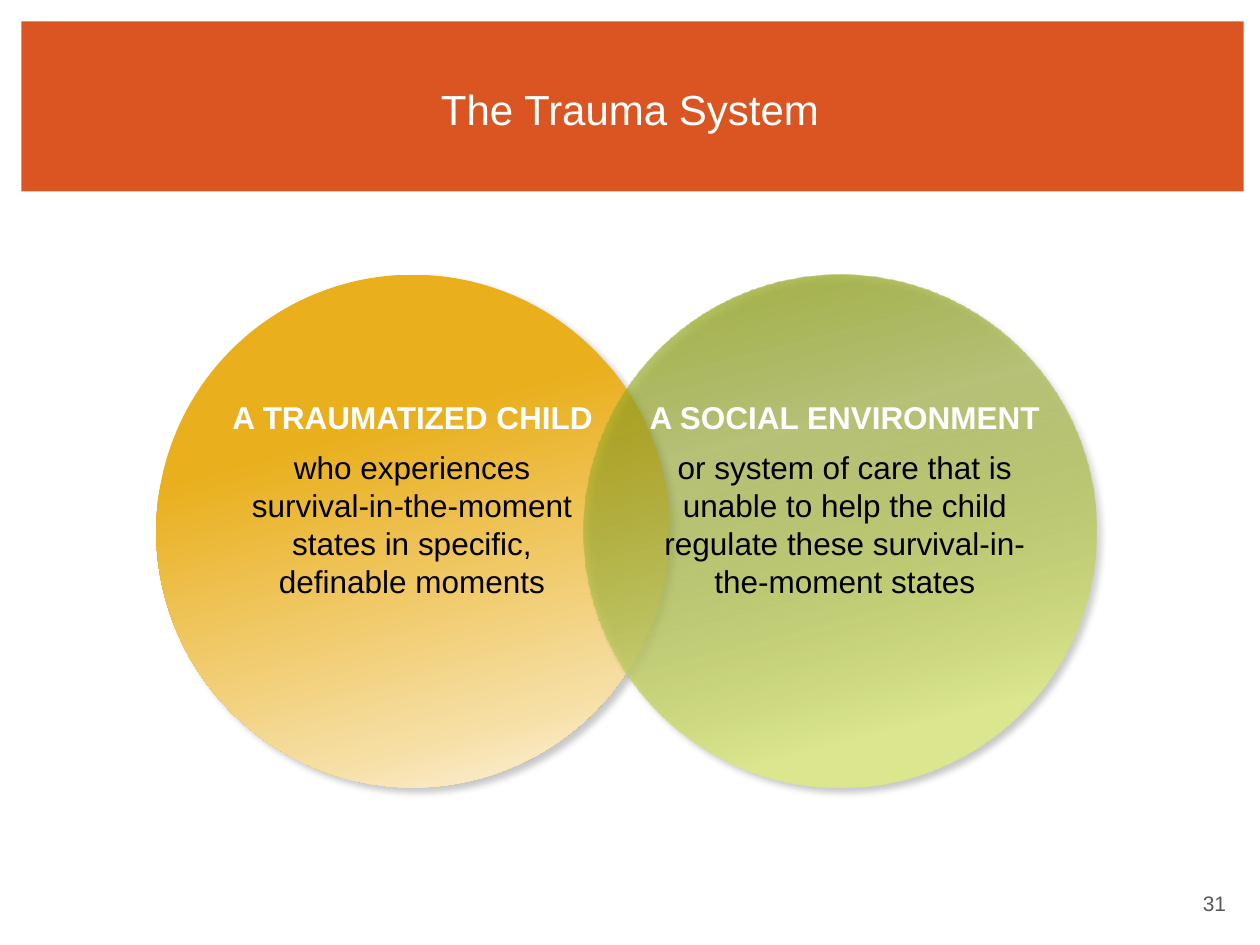
import pptx
import pptx.util
import pptx.dml.color
import pptx.enum.shapes
import pptx.enum.text
import pptx.oxml
import pptx.oxml.ns

COLORS = {
    "banner": "DA5521", "white": "FFFFFF", "black": "000000", "grey": "595959",
    "amber": "E9AF1D", "sand": "F6DFA5", "cream": "FBEFD2",
    "olive": "97A825", "lime": "DBE68F",
}
ALIGN = pptx.enum.text.PP_ALIGN
SHAPE = pptx.enum.shapes.MSO_SHAPE

prs = pptx.Presentation()
prs.slide_width = pptx.util.Inches(10)
prs.slide_height = pptx.util.Inches(7.5)
s = prs.slides.add_slide(prs.slide_layouts[6])


def place(x, y, w, h):
    across, down = prs.slide_width / 100, prs.slide_height / 100
    return [int(v) for v in (x * across, y * down, w * across, h * down)]


def add_text(box, text, size, color, bold=False, align=ALIGN.CENTER):
    tb = s.shapes.add_textbox(*place(*box))
    tf = tb.text_frame
    tf.word_wrap = True
    p = tf.paragraphs[0]
    p.text = text
    p.alignment = align
    p.font.name = "Arial"
    p.font.size = pptx.util.Pt(size)
    p.font.bold = bold
    p.font.color.rgb = pptx.dml.color.RGBColor.from_string(COLORS[color])
    return tf


banner = s.shapes.add_shape(SHAPE.RECTANGLE, *place(1.7, 2.27, 97, 18))
banner.shadow.inherit = False
banner.fill.solid()
banner.fill.fore_color.rgb = pptx.dml.color.RGBColor.from_string(COLORS["banner"])
banner.line.fill.background()

add_text((75, 93.6, 23.3, 4.27), "31", 12, "grey", align=ALIGN.RIGHT)
title = add_text((5, 4, 90, 14.93), "The Trauma System", 24, "white")
title.vertical_anchor = pptx.enum.text.MSO_ANCHOR.MIDDLE

circles = [
    (12.4, 29.5, ["amber", "amber", "sand", "cream", "amber"], 100),
    (46.3, 30.6, ["olive", "olive", "lime", "lime", "olive"], 55),
]
for left, turn, names, opacity in circles:
    sp = s.shapes.add_shape(SHAPE.OVAL, *place(left, 29.07, 40.7, 54.27))
    sp.rotation = turn
    sp.line.fill.background()
    stops = ""
    for pos, name, alpha in zip([0, 37, 74, 83, 100], names, [100, opacity, 100, 100, 100]):
        stops += (f'<a:gs pos="{pos * 1000}"><a:srgbClr val="{COLORS[name]}">'
                  f'<a:alpha val="{alpha * 1000}"/></a:srgbClr></a:gs>')
    ns = pptx.oxml.ns.nsdecls("a")
    grad = pptx.oxml.parse_xml(
        f'<a:gradFill {ns} rotWithShape="1"><a:gsLst>{stops}</a:gsLst>'
        '<a:lin ang="2700000" scaled="0"/></a:gradFill>')
    shadow = pptx.oxml.parse_xml(
        f'<a:effectLst {ns}><a:outerShdw blurRad="50800" dist="50800" dir="2580000" '
        f'rotWithShape="0"><a:srgbClr val="{COLORS["black"]}"><a:alpha val="21000"/>'
        '</a:srgbClr></a:outerShdw></a:effectLst>')
    props = sp._element.spPr
    props.insert(2, grad)
    props.append(shadow)

captions = [
    ((15.2, 35.1), "A TRAUMATIZED CHILD", (18.2, 29),
     "who experiences survival-in-the-moment states in specific, definable moments"),
    ((48, 38.1), "A SOCIAL ENVIRONMENT", (49.9, 34.3),
     "or system of care that is unable to help the child regulate these "
     "survival-in-the-moment states"),
]
for (head_x, head_w), heading, (body_x, body_w), body in captions:
    add_text((head_x, 41.47, head_w, 5.33), heading, 18, "white", bold=True)
    add_text((body_x, 46.8, body_w, 21.6), body, 18, "black")

prs.save("out.pptx")
